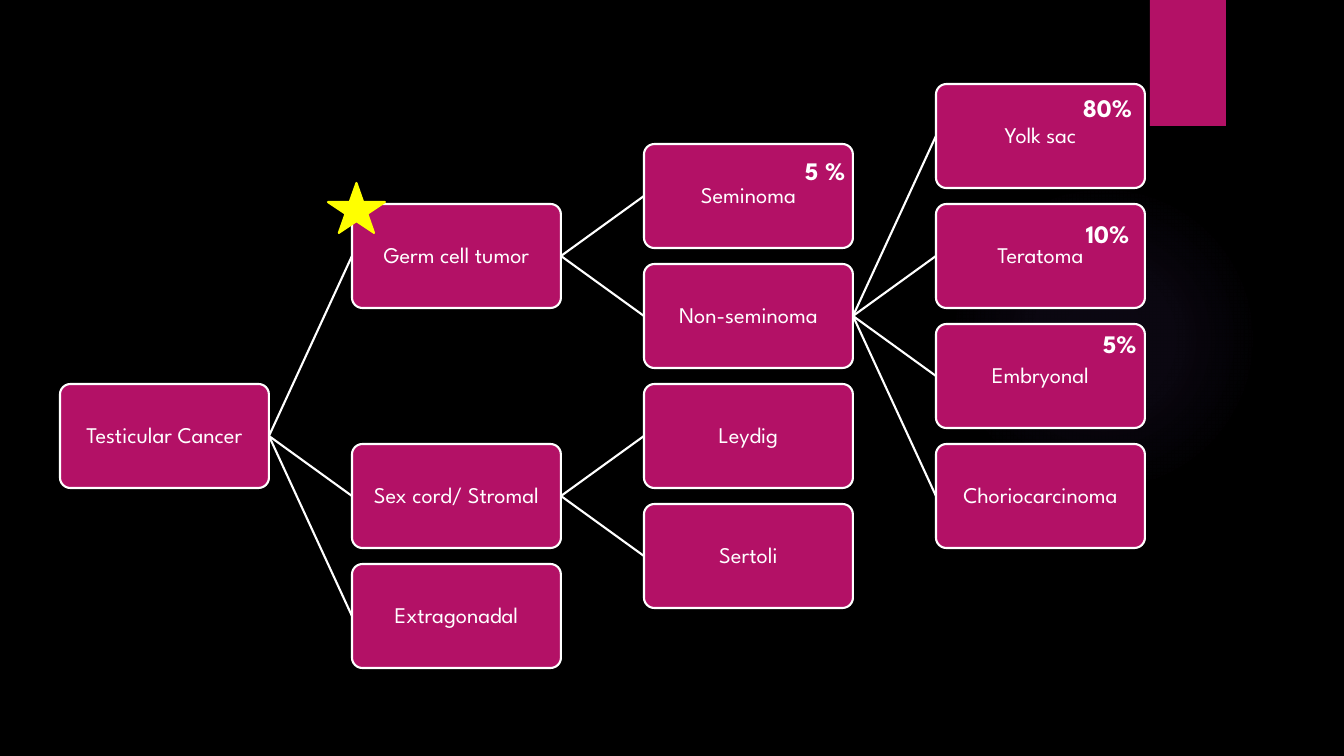
"""Build the testicular cancer classification tree slide."""
from dataclasses import dataclass

from lxml.etree import SubElement
from pptx import Presentation
from pptx.dml.color import RGBColor
from pptx.enum.shapes import MSO_CONNECTOR as CONN, MSO_SHAPE as SHAPE
from pptx.enum.text import MSO_ANCHOR as ANCHOR, PP_ALIGN as ALIGN
from pptx.oxml import parse_xml
from pptx.oxml.ns import nsdecls, qn
from pptx.util import Emu, Pt

WIDTH, HEIGHT = 1344, 756
SCALE = 12192000 / WIDTH
FONT = "League Spartan"
COLORS = {"back": "000000", "box": "B31166", "white": "FFFFFF",
          "star": "FFFF00", "glow": "9B6BF2"}
LEFT, TOP = 60, 84
COL_STEP, ROW_STEP = 292, 60
BOX_W, BOX_H = 209, 104
INSET = 4


@dataclass(frozen=True)
class Node:
    name: str
    row: int
    children: tuple["Node", ...] = ()


@dataclass(frozen=True)
class Share:
    label: str
    x: int
    y: int
    w: int


TREE = Node("Testicular Cancer", 5, (
    Node("Germ cell tumor", 2, (
        Node("Seminoma", 1),
        Node("Non-seminoma", 3, (
            Node("Yolk sac", 0),
            Node("Teratoma", 2),
            Node("Embryonal", 4),
            Node("Choriocarcinoma", 6))))),
    Node("Sex cord/ Stromal", 6, (
        Node("Leydig", 5),
        Node("Sertoli", 7))),
    Node("Extragonadal", 8)))

SHARES = [Share("80%", 1073, 87, 102), Share("5 %", 795, 150, 66),
          Share("5%", 1093, 323, 69), Share("10%", 1076, 213, 102)]


def px(n: float) -> Emu:
    return Emu(round(n * SCALE))


def rgb(name: str) -> RGBColor:
    return RGBColor.from_string(COLORS[name])


def add_text(tf, text: str, *, size: int, bold: bool = False,
             align=ALIGN.LEFT, spacing: float = 1.0) -> None:
    tf.word_wrap = True
    p = tf.paragraphs[0]
    p.alignment = align
    p.line_spacing = spacing
    r = p.add_run()
    r.text = text
    r.font.name = FONT
    r.font.size = Pt(size)
    r.font.bold = bold
    r.font.color.rgb = rgb("white")


def add_shape(s, kind, x: int, y: int, w: int, h: int, fill: str,
              line: str | None = None):
    sp = s.shapes.add_shape(kind, px(x), px(y), px(w), px(h))
    sp.shadow.inherit = False
    sp.fill.solid()
    sp.fill.fore_color.rgb = rgb(fill)
    if line:
        sp.line.color.rgb = rgb(line)
        sp.line.width = Pt(1.5)
    else:
        sp.line.fill.background()
    return sp


def add_glow(s) -> None:
    sp = add_shape(s, SHAPE.OVAL, 949, 184, 310, 310, "glow")
    stops = "".join(
        f'<a:gs pos="{pos * 1000}"><a:srgbClr val="{COLORS["glow"]}">'
        f'<a:alpha val="{alpha * 1000}"/></a:srgbClr></a:gs>'
        for pos, alpha in ((0, 7), (36, 6), (69, 0)))
    grad = parse_xml(
        f'<a:gradFill {nsdecls("a")}><a:gsLst>{stops}</a:gsLst>'
        '<a:path path="circle"><a:fillToRect l="50000" t="50000" '
        'r="50000" b="50000"/></a:path></a:gradFill>')
    sp_pr = sp._element.spPr
    sp_pr.replace(sp_pr.find(qn("a:solidFill")), grad)


def add_link(s, parent, child) -> None:
    link = s.shapes.add_connector(CONN.STRAIGHT, 0, 0, 0, 0)
    link.begin_connect(parent, 3)
    link.end_connect(child, 1)
    link.line.color.rgb = rgb("white")
    link.line.width = Pt(1.5)
    SubElement(link._element.spPr, qn("a:effectLst"))


def add_node(s, node: Node, col: int = 0):
    sp = add_shape(s, SHAPE.ROUNDED_RECTANGLE, LEFT + col * COL_STEP,
                   TOP + node.row * ROW_STEP, BOX_W, BOX_H, "box", "white")
    sp.adjustments[0] = 0.1
    tf = sp.text_frame
    tf.margin_left = tf.margin_right = px(INSET)
    tf.margin_top = tf.margin_bottom = px(INSET)
    tf.vertical_anchor = ANCHOR.MIDDLE
    add_text(tf, node.name, size=16, align=ALIGN.CENTER, spacing=0.9)
    for child in node.children:
        add_link(s, sp, add_node(s, child, col + 1))
    return sp


def add_share(s, share: Share) -> None:
    box = s.shapes.add_textbox(px(share.x), px(share.y), px(share.w), px(40))
    add_text(box.text_frame, share.label, size=18, bold=True)


def main() -> None:
    prs = Presentation()
    prs.slide_width, prs.slide_height = px(WIDTH), px(HEIGHT)
    s = prs.slides.add_slide(prs.slide_layouts[6])
    s.background.fill.solid()
    s.background.fill.fore_color.rgb = rgb("back")
    add_glow(s)
    add_shape(s, SHAPE.RECTANGLE, 1150, 0, 76, 126, "box")
    add_node(s, TREE)
    add_shape(s, SHAPE.STAR_5_POINT, 328, 183, 57, 50, "star", "star")
    for share in SHARES:
        add_share(s, share)
    prs.save("out.pptx")


if __name__ == "__main__":
    main()
